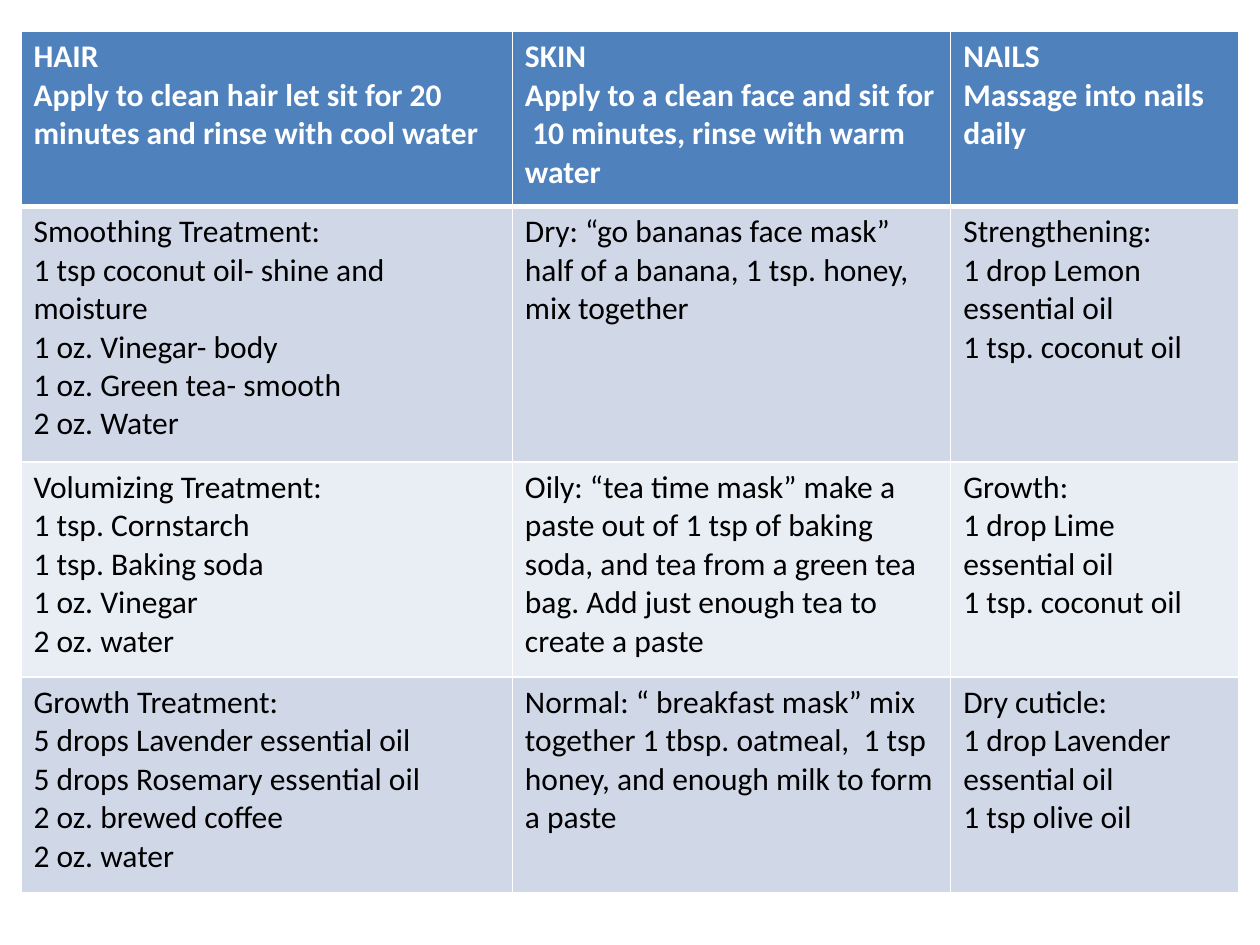
import pptx
import pptx.dml.color
import pptx.util
import lxml.etree
import pptx.oxml.ns

Pt = pptx.util.Pt
RGBColor = pptx.dml.color.RGBColor
qn = pptx.oxml.ns.qn

WHITE = RGBColor(0xFF, 0xFF, 0xFF)
BLACK = RGBColor(0x00, 0x00, 0x00)
HEADER_BLUE = RGBColor(0x4F, 0x81, 0xBD)
BAND_DARK = RGBColor(0xD0, 0xD8, 0xE8)
BAND_LIGHT = RGBColor(0xE9, 0xED, 0xF4)

COLUMN_WIDTHS = [280.8, 250.5, 164.7]
ROW_HEIGHTS = [100, 146, 123, 123]
ROW_FILLS = [HEADER_BLUE, BAND_DARK, BAND_LIGHT, BAND_DARK]

TREATMENTS = [
    [
        "HAIR\nApply to clean hair let sit for 20 minutes and rinse with cool water",
        "SKIN\nApply to a clean face and sit for  10 minutes, rinse with warm water",
        "NAILS\nMassage into nails daily",
    ],
    [
        "Smoothing Treatment:\n1 tsp coconut oil- shine and moisture\n"
        "1 oz. Vinegar- body\n1 oz. Green tea- smooth\n2 oz. Water",
        "Dry: “go bananas face mask” half of a banana, 1 tsp. honey, mix together",
        "Strengthening:\n1 drop Lemon essential oil\n1 tsp. coconut oil",
    ],
    [
        "Volumizing Treatment:\n1 tsp. Cornstarch\n1 tsp. Baking soda\n"
        "1 oz. Vinegar\n2 oz. water",
        "Oily: “tea time mask” make a paste out of 1 tsp of baking soda, and tea "
        "from a green tea bag. Add just enough tea to create a paste",
        "Growth:\n1 drop Lime essential oil\n1 tsp. coconut oil",
    ],
    [
        "Growth Treatment:\n5 drops Lavender essential oil\n"
        "5 drops Rosemary essential oil\n2 oz. brewed coffee\n2 oz. water",
        "Normal: “ breakfast mask” mix together 1 tbsp. oatmeal,  1 tsp honey, "
        "and enough milk to form a paste",
        "Dry cuticle:\n1 drop Lavender essential oil\n1 tsp olive oil",
    ],
]


def add_border(cell, side, width):
    properties = cell._tc.get_or_add_tcPr()
    line = lxml.etree.SubElement(properties, qn("a:" + side), w=str(Pt(width)))
    fill = lxml.etree.SubElement(line, qn("a:solidFill"))
    lxml.etree.SubElement(fill, qn("a:srgbClr"), val=str(WHITE))


presentation = pptx.Presentation()
presentation.slide_width = Pt(720)
presentation.slide_height = Pt(540)
slide = presentation.slides.add_slide(presentation.slide_layouts[6])

table = slide.shapes.add_table(
    len(ROW_HEIGHTS), len(COLUMN_WIDTHS),
    Pt(12), Pt(18), Pt(sum(COLUMN_WIDTHS)), Pt(sum(ROW_HEIGHTS)),
).table
for column, width in zip(table.columns, COLUMN_WIDTHS):
    column.width = Pt(width)
for row, height in zip(table.rows, ROW_HEIGHTS):
    row.height = Pt(height)

for row_index, row_texts in enumerate(TREATMENTS):
    is_header = row_index == 0
    for column_index, text in enumerate(row_texts):
        cell = table.cell(row_index, column_index)
        for side in ("lnL", "lnR"):
            add_border(cell, side, 1)
        add_border(cell, "lnT", 3 if row_index == 1 else 1)
        add_border(cell, "lnB", 3 if is_header else 1)
        cell.fill.solid()
        cell.fill.fore_color.rgb = ROW_FILLS[row_index]
        cell.text_frame.text = text
        for paragraph in cell.text_frame.paragraphs:
            for run in paragraph.runs:
                run.font.name = "Calibri"
                run.font.size = Pt(18)
                run.font.bold = is_header
                run.font.color.rgb = WHITE if is_header else BLACK

presentation.save("out.pptx")
